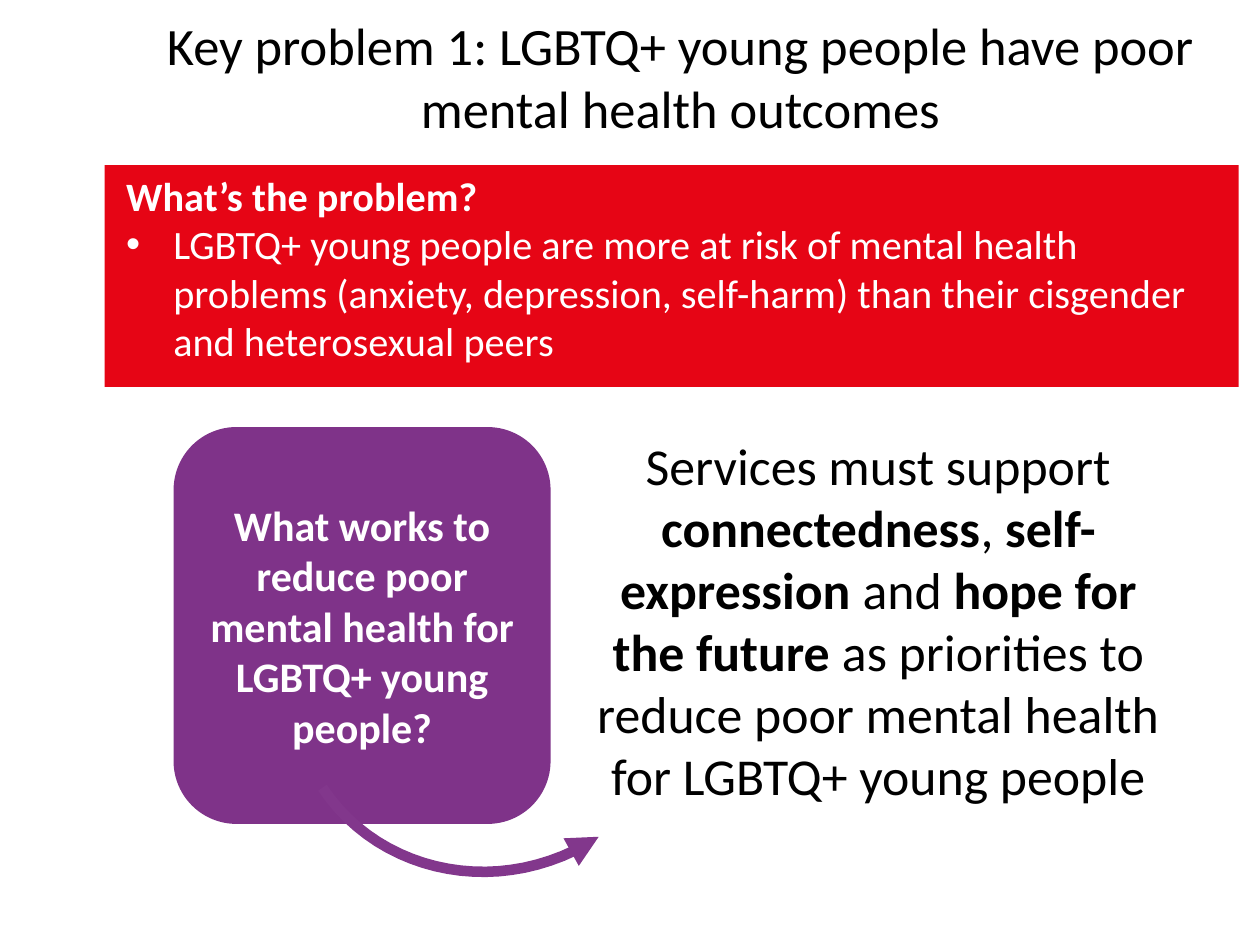
from lxml.etree import SubElement
from pptx import Presentation
from pptx.dml.color import RGBColor
from pptx.enum.shapes import MSO_SHAPE
from pptx.enum.text import MSO_ANCHOR, MSO_AUTO_SIZE, PP_ALIGN
from pptx.oxml.ns import qn
from pptx.util import Cm, Pt

FONT = "Calibri"
WHITE, BLACK = "FFFFFF", "000000"
RED, PURPLE, ARROW_PURPLE = "E60515", "7F3389", "82378C"


def color(value):
    return RGBColor.from_string(value)


def place(shape, left, top, width, height):
    shape.left, shape.top = Cm(left), Cm(top)
    shape.width, shape.height = Cm(width), Cm(height)


def prepare_frame(text_frame, anchor):
    text_frame.word_wrap = True
    text_frame.auto_size = MSO_AUTO_SIZE.NONE
    text_frame.vertical_anchor = anchor


def set_bullet(paragraph, character=None, indent=0):
    """Give a paragraph a hanging bullet, or no bullet at all."""
    properties = paragraph._p.get_or_add_pPr()
    properties.set("marL", str(Cm(indent)))
    properties.set("indent", str(-Cm(indent)))
    if character:
        SubElement(properties, qn("a:buFont"), typeface="Arial")
        SubElement(properties, qn("a:buChar"), char=character)
    else:
        SubElement(properties, qn("a:buNone"))


def write(paragraph, pieces, size, text_color, align=PP_ALIGN.LEFT):
    """Write (text, bold) pieces as runs of one paragraph."""
    paragraph.alignment = align
    paragraph.space_before = Pt(0)
    for text, bold in pieces:
        run = paragraph.add_run()
        run.text = text
        run.font.name = FONT
        run.font.size = Pt(size)
        run.font.bold = bold
        run.font.color.rgb = color(text_color)


def add_panel(slide, kind, fill, *box):
    shape = slide.shapes.add_shape(kind, *map(Cm, box))
    shape.shadow.inherit = False
    shape.fill.solid()
    shape.fill.fore_color.rgb = color(fill)
    shape.line.fill.background()
    return shape


def add_curved_arrow(slide, controls, line_color, width, steps=24):
    """Draw a cubic curve through four control points, ending in an arrowhead."""
    def point(t):
        weights = ((1 - t) ** 3, 3 * t * (1 - t) ** 2, 3 * t * t * (1 - t), t ** 3)
        return tuple(Cm(sum(w * c[axis] for w, c in zip(weights, controls)))
                     for axis in (0, 1))

    points = [point(step / steps) for step in range(steps + 1)]
    builder = slide.shapes.build_freeform(*points[0])
    builder.add_line_segments(points[1:], close=False)
    shape = builder.convert_to_shape()
    shape.shadow.inherit = False
    shape.fill.background()
    shape.line.color.rgb = color(line_color)
    shape.line.width = Pt(width)
    SubElement(shape.line._get_or_add_ln(), qn("a:tailEnd"), type="triangle")


def fill_title(title):
    place(title, 2.29, 0.13, 22.86, 2.8)
    prepare_frame(title.text_frame, MSO_ANCHOR.MIDDLE)
    write(title.text_frame.paragraphs[0],
          [("Key problem 1: LGBTQ+ young people have poor mental health outcomes", False)],
          30, BLACK, PP_ALIGN.CENTER)


def fill_problem(body):
    place(body, 2.29, 3.33, 22.56, 3.45)
    frame = body.text_frame
    prepare_frame(frame, MSO_ANCHOR.TOP)
    heading, item = frame.paragraphs[0], frame.add_paragraph()
    set_bullet(heading)
    write(heading, [("What’s the problem?", True)], 23, WHITE)
    set_bullet(item, "•", 0.95)
    write(item, [("LGBTQ+ young people are more at risk of mental health problems "
                  "(anxiety, depression, self-harm) than their cisgender and "
                  "heterosexual peers", False)], 23, WHITE)


def main():
    presentation = Presentation()
    presentation.slide_width, presentation.slide_height = Cm(25.4), Cm(19.05)
    slide = presentation.slides.add_slide(presentation.slide_layouts[1])
    title, body = slide.placeholders

    # Red problem panel, kept behind the placeholders
    panel = add_panel(slide, MSO_SHAPE.RECTANGLE, RED, 2.11, 3.33, 22.86, 4.47)
    title._element.addprevious(panel._element)
    fill_title(title)
    fill_problem(body)

    # Question
    question = add_panel(slide, MSO_SHAPE.ROUNDED_RECTANGLE, PURPLE, 3.5, 8.61, 7.6, 8)
    prepare_frame(question.text_frame, MSO_ANCHOR.MIDDLE)
    write(question.text_frame.paragraphs[0],
          [("What works to reduce poor mental health for LGBTQ+ young people?", True)],
          24, WHITE, PP_ALIGN.CENTER)

    # Arrow from question to answer
    add_curved_arrow(slide, [(6.5, 15.88), (7.7, 17.68), (10.19, 18.11), (12.07, 16.87)],
                     ARROW_PURPLE, 6)

    # Answer
    answer = slide.shapes.add_textbox(Cm(11.71), Cm(8.61), Cm(12), Cm(8.64))
    prepare_frame(answer.text_frame, MSO_ANCHOR.TOP)
    write(answer.text_frame.paragraphs[0], [
        ("Services must support ", False),
        ("connectedness", True),
        (", ", False),
        ("self-expression", True),
        (" and ", False),
        ("hope for the future", True),
        (" as priorities to reduce poor mental health for LGBTQ+ young people", False),
    ], 29.6, BLACK, PP_ALIGN.CENTER)

    presentation.save("out.pptx")


if __name__ == "__main__":
    main()
